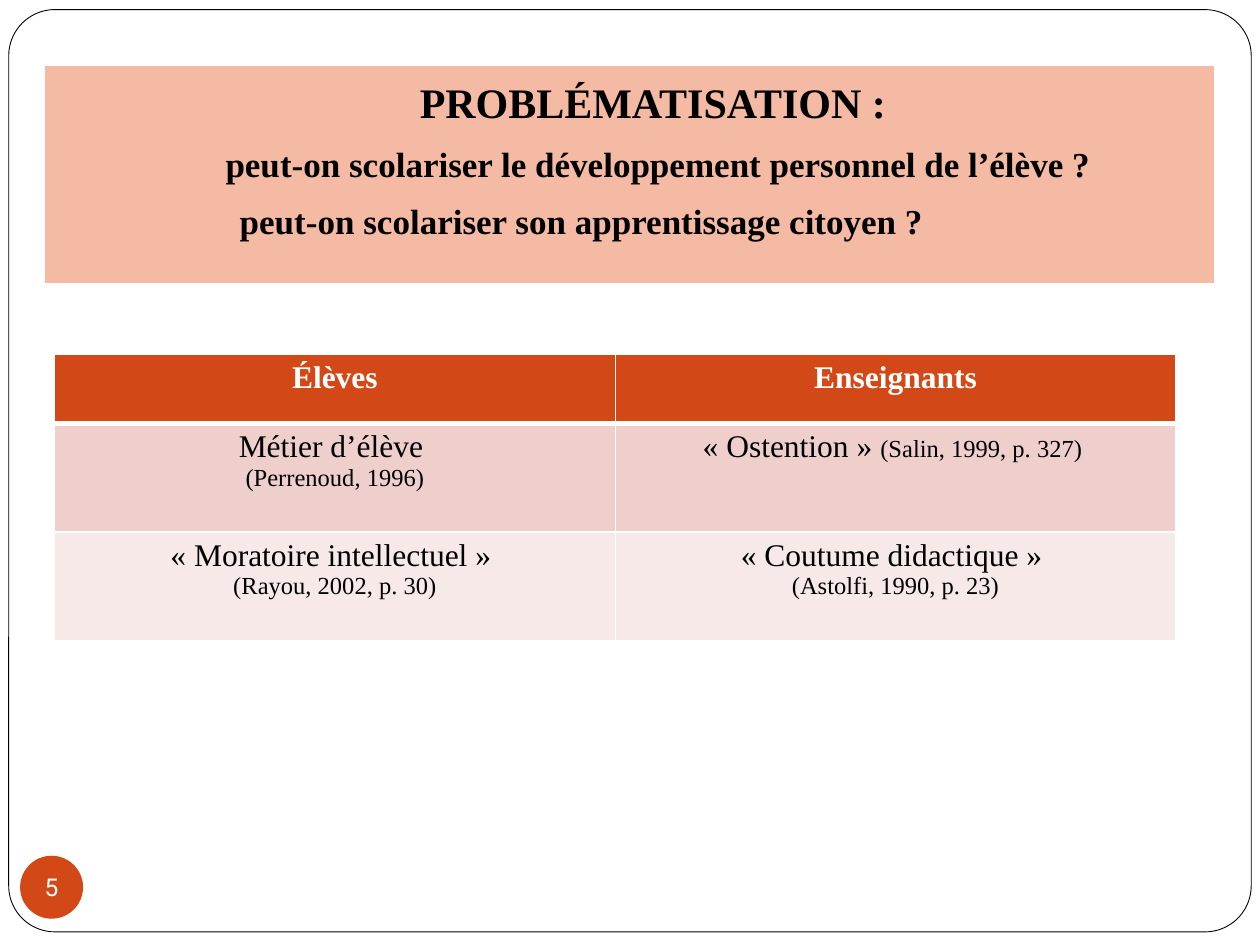
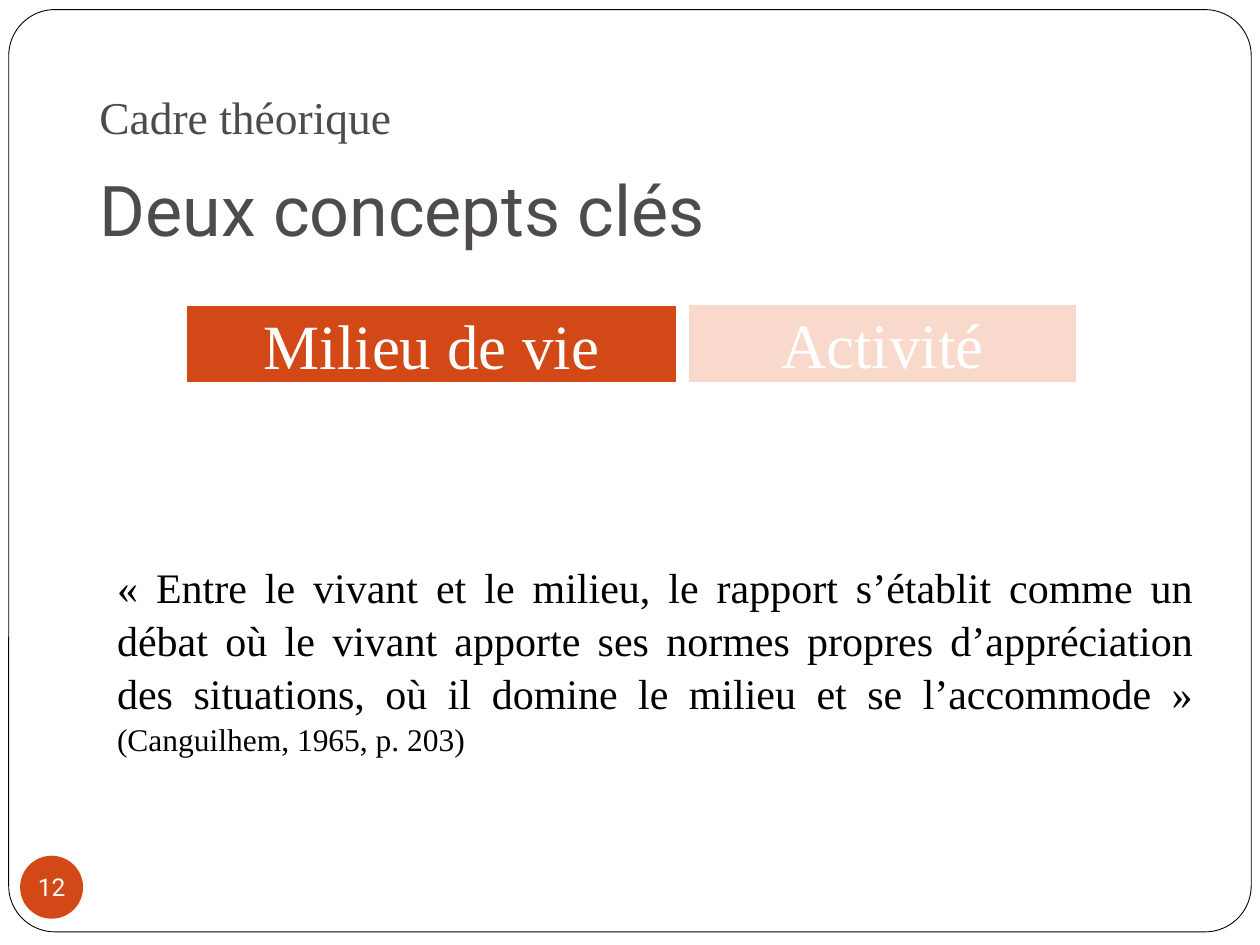
from lxml.etree import SubElement as Sub
from pptx import Presentation
from pptx.dml.color import RGBColor
from pptx.enum.shapes import MSO_SHAPE as Kind
from pptx.enum.text import MSO_ANCHOR as Anchor, MSO_AUTO_SIZE as Auto, PP_ALIGN as Align
from pptx.oxml.ns import qn
from pptx.util import Pt

SERIF, SANS = "Times New Roman", "Roboto"
RUST, PEACH, BLUSH = "D34817", "F4B39B", "FAD9CD"
WHITE, BLACK, GREY = "FFFFFF", "000000", "4F4B4B"
ROWS = [RUST, "EFCFCC", "F7E9E8"]

BIG = dict(name=SERIF, size=Pt(24), bold=True)
ASK = dict(name=SERIF, size=Pt(20), bold=True)
HEAD = dict(name=SERIF, size=Pt(18), bold=True)
TERM = dict(name=SERIF, size=Pt(18), bold=False)
CITE = dict(name=SERIF, size=Pt(14), bold=False)
TITLE = dict(name=SANS, size=Pt(40), bold=False)
OVER = dict(name=SERIF, size=Pt(26))
NAME = dict(name=SERIF, size=Pt(36))
QUOTE = dict(name=SERIF, size=Pt(24))
PAGE = dict(name=SANS, size=Pt(14))

MID = dict(alignment=Align.CENTER)
LEFT = dict(alignment=Align.LEFT)
GAP = dict(space_before=Pt(0), space_after=Pt(8.4))

BAND = [
    ([("PROBLÉMATISATION : ", BIG)], {**MID, **GAP, "line_spacing": 0.9}),
    ([("peut-on scolariser le développement personnel de l’élève ?", ASK)], {**MID, **GAP}),
    ([("peut-on scolariser son apprentissage citoyen ?", ASK)], {**LEFT, **GAP}),
]
GRID = [
    [[[("Élèves", HEAD)]], [[("Enseignants", HEAD)]]],
    [
        [[("Métier d’élève ", TERM)], [("(Perrenoud, 1996)", CITE)]],
        [[("« Ostention » ", TERM), ("(Salin, 1999, p. 327) ", CITE)]],
    ],
    [
        [[("« Moratoire intellectuel » ", TERM)], [("(Rayou, 2002, p. 30)", CITE)]],
        [[("« Coutume didactique » ", TERM)], [("(Astolfi, 1990, p. 23)", CITE)]],
    ],
]
TILES = [
    ("Milieu de vie", RUST, (106.6, 174.3, 280.1, 44.6)),
    ("Activité", BLUSH, (393.1, 173.6, 222.5, 45.3)),
]
SAYING = [
    ("« Entre le vivant et le milieu, le rapport s’établit comme un débat où le vivant "
     "apporte ses normes propres d’appréciation des situations, où il domine le milieu "
     "et se l’accommode » ", QUOTE),
    ("(Canguilhem, 1965, p. 203)", TERM),
]


def tint(code):
    return RGBColor.from_string(code)


def apply(thing, form):
    for key, val in form.items():
        setattr(thing, key, val)


def write(frame, paras, color):
    for i, (runs, form) in enumerate(paras):
        para = frame.paragraphs[0] if i == 0 else frame.add_paragraph()
        apply(para, form)
        for text, font in runs:
            run = para.add_run()
            run.text = text
            apply(run.font, font)
            run.font.color.rgb = tint(color)


def paint(shape, fill, line=None, width=1):
    shape.fill.solid()
    shape.fill.fore_color.rgb = tint(fill)
    if line:
        shape.line.color.rgb = tint(line)
        shape.line.width = Pt(width)
    else:
        shape.line.fill.background()


def place(shape, box):
    apply(shape, dict(zip(("left", "top", "width", "height"), map(Pt, box))))


def setup(shape, anchor, inset=None):
    frame = shape.text_frame
    apply(frame, dict(word_wrap=True, auto_size=Auto.NONE, vertical_anchor=anchor))
    left, rest = inset or (7.2, 3.6)
    apply(frame, dict(margin_left=Pt(left), margin_right=Pt(7.2 if left else 0),
                      margin_top=Pt(rest), margin_bottom=Pt(rest)))
    return frame


def draw(slide, kind, box):
    shape = slide.shapes.add_shape(kind, *map(Pt, box))
    shape.shadow.inherit = False
    return shape


def note(slide, box, runs, form):
    shape = slide.shapes.add_textbox(*map(Pt, box))
    return setup(shape, Anchor.TOP), [(runs, form)]


def begin(deck, page):
    slide = deck.slides.add_slide(deck.slide_layouts[5])
    edge = draw(slide, Kind.ROUNDED_RECTANGLE, (5, 5.5, 710, 527))
    edge.adjustments[0] = 0.05
    edge.fill.background()
    edge.line.color.rgb = tint(BLACK)
    edge.line.width = Pt(0.5)
    disc = draw(slide, Kind.OVAL, (11.5, 489, 36, 36))
    paint(disc, RUST)
    frame = setup(disc, Anchor.MIDDLE, (0, 0))
    frame.word_wrap = False
    write(frame, [([(page, PAGE)], MID)], WHITE)
    return slide


def border(cell, low):
    props = cell._tc.get_or_add_tcPr()
    for side, width in dict(lnL=1, lnR=1, lnT=1, lnB=low).items():
        line = Sub(props, qn("a:" + side), w=str(Pt(width)))
        Sub(Sub(line, qn("a:solidFill")), qn("a:srgbClr"), val=WHITE)


def issue(deck):
    slide = begin(deck, "5")
    band = slide.shapes.title
    place(band, (25.4, 37.5, 669, 124.5))
    paint(band, PEACH, WHITE)
    shade = band._element.spPr.find(qn("a:solidFill"))[0]
    Sub(shade, qn("a:alpha"), val="90000")
    frame = setup(band, Anchor.TOP, (39.6, 9.6))
    write(frame, BAND, BLACK)
    frame.paragraphs[2]._p.get_or_add_pPr().set("marL", str(Pt(72)))

    table = slide.shapes.add_table(3, 2, *map(Pt, (31.2, 202.3, 640.8, 163.6))).table
    for col in table.columns:
        col.width = Pt(320.4)
    for r, (row, fill) in enumerate(zip(GRID, ROWS)):
        table.rows[r].height = Pt(62 if r else 39.6)
        for c, lines in enumerate(row):
            cell = table.cell(r, c)
            border(cell, 1 if r else 3)
            cell.fill.solid()
            cell.fill.fore_color.rgb = tint(fill)
            write(cell.text_frame, [(runs, MID) for runs in lines], BLACK if r else WHITE)


def theory(deck):
    slide = begin(deck, "12")
    title = slide.shapes.title
    place(title, (49.7, 91.4, 620.6, 42.5))
    write(setup(title, Anchor.TOP), [([("Deux concepts clés", TITLE)], LEFT)], GREY)
    write(*note(slide, (49.7, 47.5, 330.5, 36), [("Cadre théorique", OVER)], LEFT), GREY)
    for name, fill, box in TILES:
        tile = draw(slide, Kind.RECTANGLE, box)
        paint(tile, fill, WHITE)
        write(setup(tile, Anchor.MIDDLE, (0, 0)), [([(name, NAME)], MID)], WHITE)
    form = dict(alignment=Align.JUSTIFY, line_spacing=1.05)
    write(*note(slide, (59.8, 316, 629.3, 114), SAYING, form), BLACK)


def main():
    deck = Presentation()
    apply(deck, dict(slide_width=Pt(720), slide_height=Pt(540)))
    issue(deck)
    theory(deck)
    deck.save("out.pptx")


if __name__ == "__main__":
    main()
